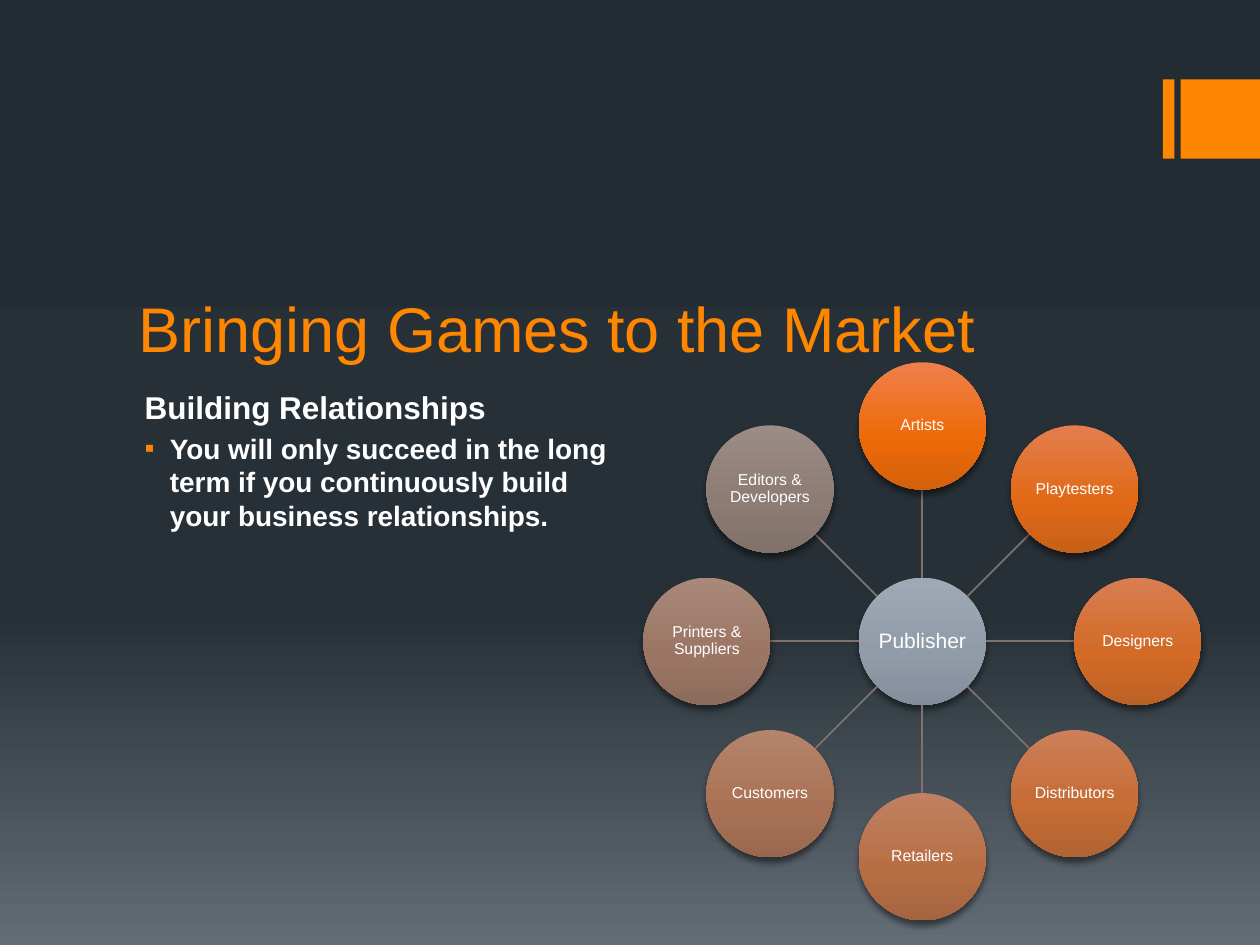
import copy
import math

import lxml.etree
import pptx
import pptx.dml.color
import pptx.enum.shapes
import pptx.enum.text
import pptx.oxml.ns
import pptx.util

Inches, Pt = pptx.util.Inches, pptx.util.Pt
qn = pptx.oxml.ns.qn
ALIGN, ANCHOR = pptx.enum.text.PP_ALIGN, pptx.enum.text.MSO_ANCHOR
SHAPE = pptx.enum.shapes.MSO_SHAPE

FONT = "Arial"
COLORS = {"accent": "FF8600", "text": "FFFFFF", "spoke": "80716A", "shadow": "000000"}
BACKGROUND = [(0, "242C33"), (0.65, "273037"), (1, "636D76")]

TITLE = "Bringing Games to the Market"
HEADING = "Building Relationships"
BULLET = ("You will only succeed in the long term if you continuously build "
          "your business relationships.")
HUB = ("Publisher", ("9FA9B6", "929BA8", "838D9B"))
# Clockwise from the top: label and gradient colours
PARTNERS = [
    ("Artists", ("EE7F4C", "EE6A07", "D2610C")),
    ("Playtesters", ("E37E4E", "E16916", "C76119")),
    ("Designers", ("D87E52", "D36A25", "BC6126")),
    ("Distributors", ("CC7F59", "C66C34", "B06333")),
    ("Retailers", ("C08162", "B86E44", "A46541")),
    ("Customers", ("B4846C", "AA7254", "98684E")),
    ("Printers & Suppliers", ("A88879", "9C7664", "8C6C5C")),
    ("Editors & Developers", ("9B8C86", "8D7C74", "80716A")),
]

CENTER_X, CENTER_Y = 7.32, 5.09
ORBIT = 1.71
DIAMETER = 1.01
ACCENT_TOP, ACCENT_HEIGHT = 0.63, 0.63
ACCENT_BARS = [(9.23, 0.09), (9.37, 0.63)]  # left, width


def rgb(value):
    return pptx.dml.color.RGBColor.from_string(value)


def format_runs(paragraph, size, color, bold=False):
    for run in paragraph.runs:
        run.font.name = FONT
        run.font.size = Pt(size)
        run.font.bold = bold
        run.font.color.rgb = rgb(color)


def fill_gradient(fill, owner, stops):
    """Fill top to bottom with three stops; owner is the element holding the fill."""
    fill.gradient()
    fill.gradient_angle = 270
    stop_list = owner.find(".//" + qn("a:gsLst"))
    stop_list.append(copy.deepcopy(stop_list[0]))
    for stop, (position, color) in zip(fill.gradient_stops, stops):
        stop.position = position
        stop.color.rgb = rgb(color)


def add_shadow(shape):
    shape.shadow.inherit = False
    effects = shape._element.spPr.find(qn("a:effectLst"))
    outer = lxml.etree.SubElement(
        effects, qn("a:outerShdw"), blurRad=str(Pt(3.8)), dist=str(Pt(3)),
        dir="5400000", rotWithShape="0")
    color = lxml.etree.SubElement(outer, qn("a:srgbClr"), val=COLORS["shadow"])
    lxml.etree.SubElement(color, qn("a:alpha"), val="48000")


def add_circle(slide, x, y, label, colors, size):
    """Add a labelled circle centred on x, y."""
    circle = slide.shapes.add_shape(
        SHAPE.OVAL, Inches(x - DIAMETER / 2), Inches(y - DIAMETER / 2),
        Inches(DIAMETER), Inches(DIAMETER))
    fill_gradient(circle.fill, circle._element.spPr, zip((0, 0.6, 1), colors))
    circle.line.fill.background()
    add_shadow(circle)
    frame = circle.text_frame
    frame.word_wrap = True
    frame.vertical_anchor = ANCHOR.MIDDLE
    frame.margin_left = frame.margin_right = Inches(0.01)
    frame.margin_top = frame.margin_bottom = Inches(0.01)
    frame.text = label
    paragraph = frame.paragraphs[0]
    paragraph.alignment = ALIGN.CENTER
    paragraph.line_spacing = 0.9
    format_runs(paragraph, size, COLORS["text"])


def add_spoke(slide, cosine, sine):
    """Join the edge of the hub to the edge of a partner circle."""
    ends = []
    for distance in (DIAMETER / 2, ORBIT - DIAMETER / 2):
        ends += [Inches(CENTER_X + distance * cosine), Inches(CENTER_Y + distance * sine)]
    spoke = slide.shapes.add_connector(pptx.enum.shapes.MSO_CONNECTOR.STRAIGHT, *ends)
    spoke.line.color.rgb = rgb(COLORS["spoke"])
    spoke.line.width = Pt(1)
    lxml.etree.SubElement(spoke._element.spPr, qn("a:effectLst"))


def add_wheel(slide):
    add_circle(slide, CENTER_X, CENTER_Y, *HUB, 12)
    for index, (label, colors) in enumerate(PARTNERS):
        angle = 2 * math.pi * index / len(PARTNERS) - math.pi / 2
        cosine, sine = math.cos(angle), math.sin(angle)
        add_spoke(slide, cosine, sine)
        add_circle(slide, CENTER_X + ORBIT * cosine, CENTER_Y + ORBIT * sine,
                   label, colors, 9)


def add_accent_bars(slide):
    for left, width in ACCENT_BARS:
        bar = slide.shapes.add_shape(
            SHAPE.RECTANGLE, Inches(left), Inches(ACCENT_TOP), Inches(width),
            Inches(ACCENT_HEIGHT))
        bar.fill.solid()
        bar.fill.fore_color.rgb = rgb(COLORS["accent"])
        bar.line.fill.background()
        bar.shadow.inherit = False


def set_title(slide):
    title = slide.shapes.title
    title.left, title.top = Inches(1), Inches(1.69)
    title.width, title.height = Inches(8), Inches(1.26)
    title.text_frame.text = TITLE
    title.text_frame.vertical_anchor = ANCHOR.BOTTOM
    paragraph = title.text_frame.paragraphs[0]
    paragraph.alignment = ALIGN.LEFT
    format_runs(paragraph, 36, COLORS["accent"])


def add_body(slide):
    body = slide.shapes.add_textbox(Inches(1), Inches(3.03), Inches(3.95), Inches(3.87))
    frame = body.text_frame
    frame.word_wrap = True
    frame.text = HEADING
    frame.add_paragraph().text = BULLET
    for paragraph, size in zip(frame.paragraphs, (18, 16)):
        paragraph.space_before = Pt(size * 0.2)
        format_runs(paragraph, size, COLORS["text"], bold=True)
        properties = paragraph._p.get_or_add_pPr()
        properties.set("marL", str(Inches(0.25)))
        properties.set("indent", str(Inches(-0.2)))
    bullet_color = lxml.etree.SubElement(properties, qn("a:buClr"))
    lxml.etree.SubElement(bullet_color, qn("a:srgbClr"), val=COLORS["accent"])
    lxml.etree.SubElement(properties, qn("a:buFont"), typeface=FONT)
    lxml.etree.SubElement(properties, qn("a:buChar"), char="▪")


def main():
    presentation = pptx.Presentation()
    presentation.slide_width, presentation.slide_height = Inches(10), Inches(7.5)
    slide = presentation.slides.add_slide(presentation.slide_layouts[5])
    fill_gradient(slide.background.fill, slide._element, BACKGROUND)
    add_accent_bars(slide)
    set_title(slide)
    add_body(slide)
    add_wheel(slide)
    presentation.save("out.pptx")


if __name__ == "__main__":
    main()
